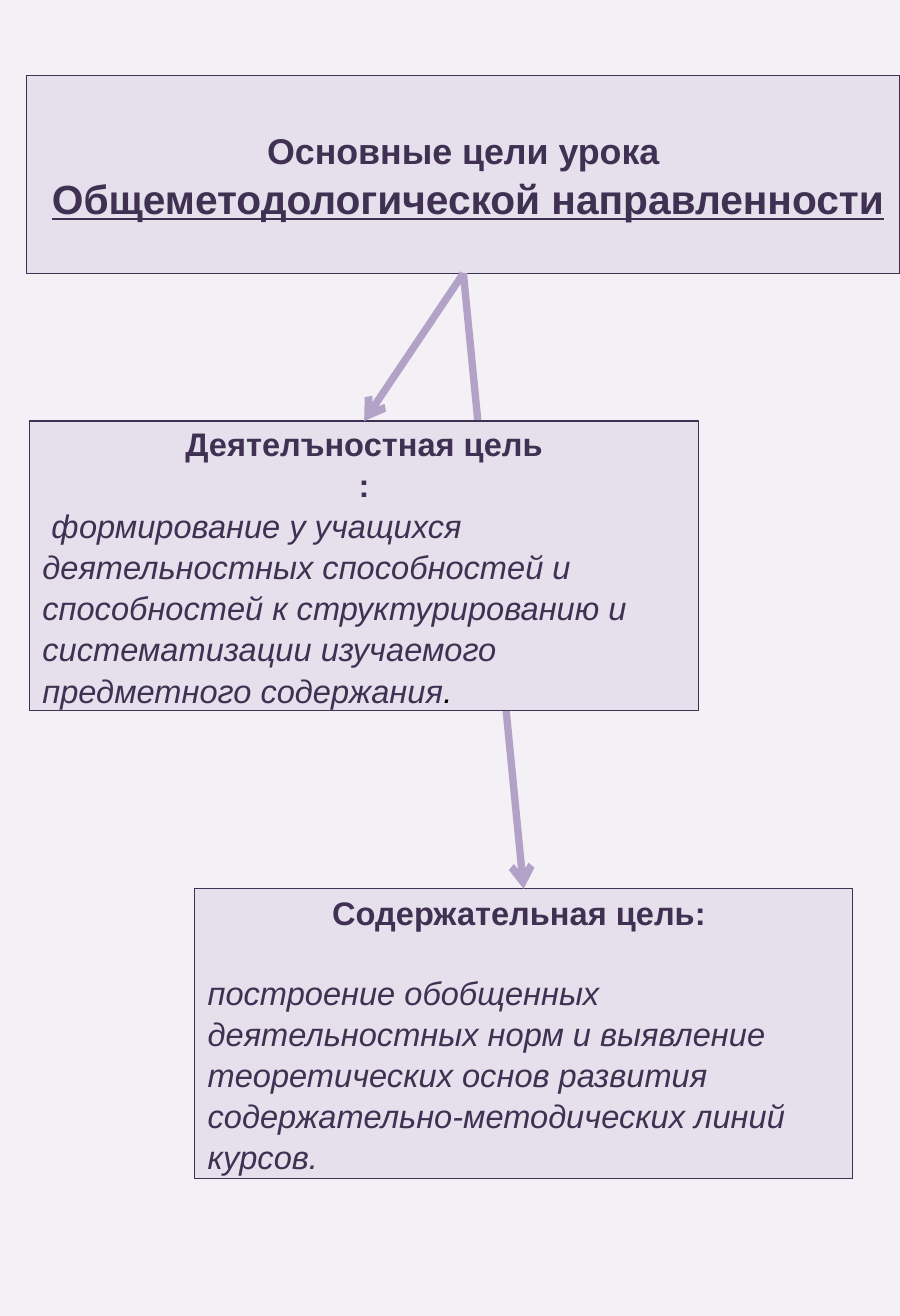
from lxml import etree
from pptx import Presentation
from pptx.dml.color import RGBColor
from pptx.enum.shapes import MSO_CONNECTOR as Link, MSO_SHAPE as Shape
from pptx.enum.text import MSO_ANCHOR as Anchor, MSO_AUTO_SIZE as AutoSize, PP_ALIGN as Align
from pptx.oxml.ns import qn
from pptx.util import Cm, Pt

PAGE, PANEL, INK, ARROW = "F3F0F6", "E6E0EC", "403152", "B3A2C7"
BOTTOM, TOP = 2, 0  # connection sites


def color(hex_code):
    return RGBColor.from_string(hex_code)


def style_panel(panel, box):
    """Place a framed panel in its box and return its text frame."""
    panel.left, panel.top, panel.width, panel.height = (Cm(v) for v in box)
    panel.fill.solid()
    panel.fill.fore_color.rgb = color(PANEL)
    panel.line.color.rgb = color(INK)
    panel.line.width = Pt(0.75)
    frame = panel.text_frame
    frame.word_wrap = True
    frame.auto_size = AutoSize.NONE
    frame.vertical_anchor = Anchor.MIDDLE
    frame.margin_left = frame.margin_right = Cm(0.28)
    frame.margin_top = frame.margin_bottom = Cm(0.13)
    return frame


def add_run(paragraph, text, size=20, bold=False, italic=False, underline=False, ink=INK):
    run = paragraph.add_run()
    run.text = text
    font = run.font
    font.name, font.size = "Arial", Pt(size)
    font.bold, font.italic, font.underline = bold, italic, underline
    font.color.rgb = color(ink)


def fill_text(frame, paragraphs):
    """Write (alignment, space before, runs) for each paragraph."""
    for i, (align, before, runs) in enumerate(paragraphs):
        paragraph = frame.add_paragraph() if i else frame.paragraphs[0]
        paragraph.alignment = align
        paragraph.line_spacing = 1.05
        paragraph.space_before = Pt(before)
        for text, look in runs:
            add_run(paragraph, text, **look)


def add_heading(slide, box):
    heading = slide.shapes.title
    fill_text(style_panel(heading, box), [
        (Align.CENTER, 0, [("Основные цели урока", dict(size=22, bold=True))]),
        (Align.CENTER, 0, [
            (" ", dict(bold=True)),
            ("Общеметодологической направленности", dict(size=25, bold=True, underline=True)),
        ]),
    ])
    return heading


def add_goal(slide, box, titles, gap, description):
    """Add a goal panel: bold centred title lines above an italic description."""
    goal = slide.shapes.add_shape(Shape.RECTANGLE, 0, 0, 0, 0)
    goal.shadow.inherit = False
    lines = [(Align.CENTER, 0, [(title, dict(bold=True))]) for title in titles]
    fill_text(style_panel(goal, box), lines + [(Align.LEFT, gap, description)])
    return goal


def add_arrow(slide, source, target):
    arrow = slide.shapes.add_connector(Link.STRAIGHT, 0, 0, 0, 0)
    arrow.begin_connect(source, BOTTOM)
    arrow.end_connect(target, TOP)
    arrow.line.color.rgb = color(ARROW)
    arrow.line.width = Pt(4.5)
    etree.SubElement(arrow.line._get_or_add_ln(), qn("a:tailEnd"), type="arrow")
    etree.SubElement(arrow._element.spPr, qn("a:effectLst"))


def build_goals_slide(prs):
    slide = prs.slides.add_slide(prs.slide_layouts[5])
    slide.background.fill.solid()
    slide.background.fill.fore_color.rgb = color(PAGE)

    heading = add_heading(slide, (0.58, 1.63, 18.92, 4.29))

    # Content goal; its arrow runs behind the activity goal
    content_goal = add_goal(slide, (4.22, 19.25, 14.25, 6.27), ["Содержательная цель: "], 24, [
        ("построение обобщенных деятельностных норм и выявление теоретических основ "
         "развития содержательно-методических линий курсов.", dict(italic=True)),
    ])
    add_arrow(slide, heading, content_goal)

    # Activity goal
    activity_goal = add_goal(slide, (0.64, 9.12, 14.5, 6.27), ["Деятелъностная цель", ":"], 0, [
        (" ", {}),
        ("формирование у учащихся деятельностных способностей и способностей к "
         "структурированию и систематизации изучаемого предметного содержания",
         dict(italic=True)),
        (".", dict(italic=True, ink="000000")),
    ])
    add_arrow(slide, heading, activity_goal)


def main():
    prs = Presentation()
    prs.slide_width, prs.slide_height = Cm(19.5), Cm(28.5)
    build_goals_slide(prs)
    prs.save("out.pptx")


if __name__ == "__main__":
    main()
